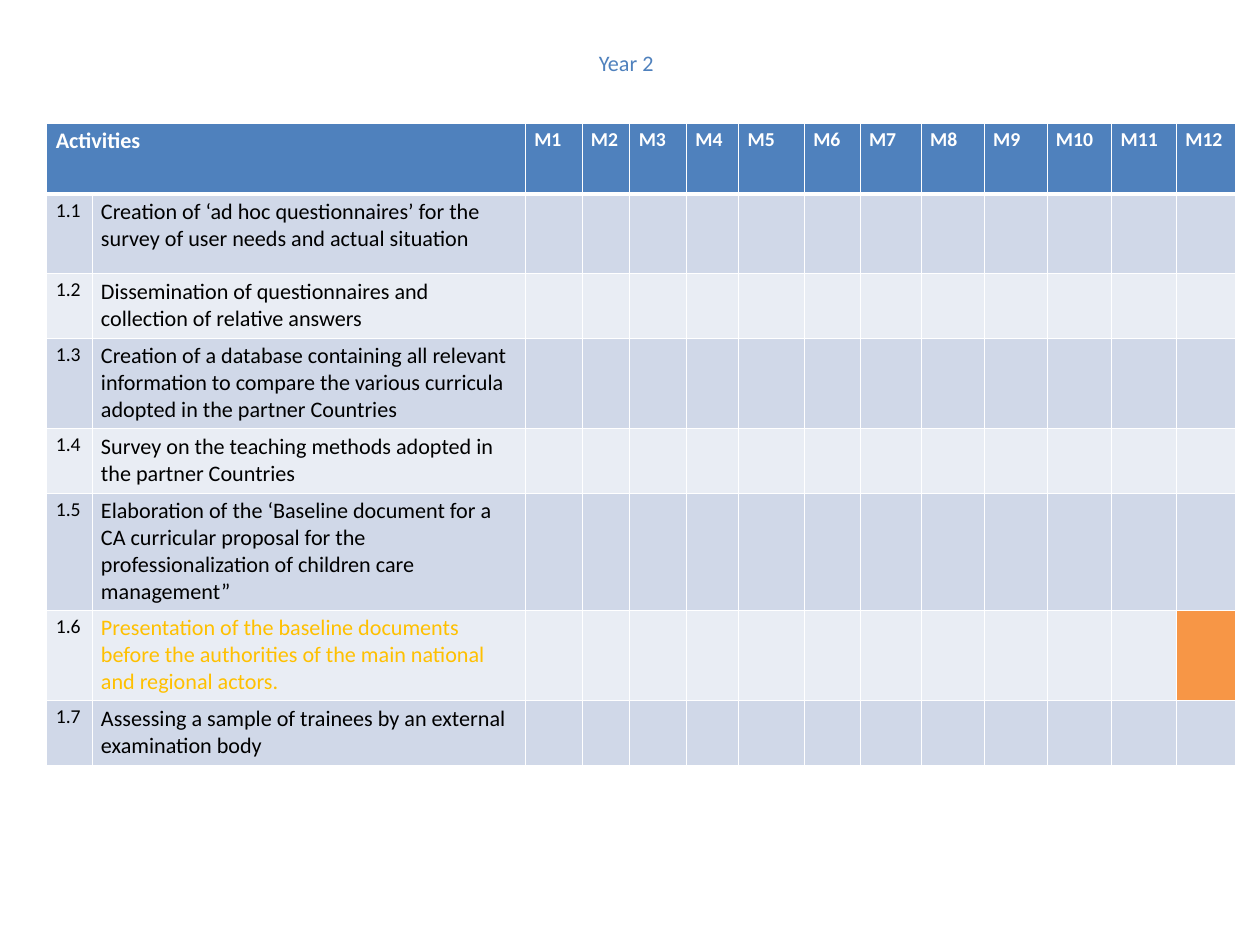
from lxml import etree
from pptx import Presentation
from pptx.dml.color import RGBColor
from pptx.oxml.ns import qn
from pptx.util import Inches, Pt

BLUE = RGBColor(0x4F, 0x81, 0xBD)
DARK_BAND = RGBColor(0xD0, 0xD8, 0xE8)
LIGHT_BAND = RGBColor(0xE9, 0xED, 0xF4)
ORANGE = RGBColor(0xF7, 0x96, 0x46)
AMBER = RGBColor(0xFF, 0xC0, 0x00)
WHITE = RGBColor(0xFF, 0xFF, 0xFF)
BLACK = RGBColor(0x00, 0x00, 0x00)

COLUMN_WIDTHS = [0.51, 4.89, 0.64, 0.54, 0.64, 0.59, 0.74,
                 0.63, 0.69, 0.71, 0.71, 0.73, 0.73, 0.67]
ROW_HEIGHTS = [0.8, 0.9, 0.73, 1.02, 0.73, 1.32, 1.02, 0.73]
ACTIVITIES = [
    "Creation of ‘ad hoc questionnaires’ for the survey of user needs and actual situation",
    "Dissemination of questionnaires and collection of relative answers",
    "Creation of a database containing all relevant information to compare "
    "the various curricula adopted in the partner Countries",
    "Survey on the teaching methods adopted in the partner Countries",
    "Elaboration of the ‘Baseline document for a CA curricular proposal for the "
    "professionalization of children care management”",
    "Presentation of the baseline documents before the authorities of the main "
    "national and regional actors.",
    "Assessing a sample of trainees by an external examination body",
]
PRESENTATION_ROW = 6
MONTH_12 = 13


def write(text_frame, text, size, color, bold=False):
    text_frame.text = text
    font = text_frame.paragraphs[0].runs[0].font
    font.name = "Calibri"
    font.size = Pt(size)
    font.bold = bold
    font.color.rgb = color


def add_borders(cell, top, bottom):
    """Draw white borders, 1 pt at the sides; call before filling the cell."""
    properties = cell._tc.get_or_add_tcPr()
    for side, width in (("L", 1), ("R", 1), ("T", top), ("B", bottom)):
        line = etree.SubElement(properties, qn(f"a:ln{side}"), w=str(Pt(width)))
        fill = etree.SubElement(line, qn("a:solidFill"))
        etree.SubElement(fill, qn("a:srgbClr"), val=str(WHITE))


presentation = Presentation()
presentation.slide_width = Inches(14.22)
presentation.slide_height = Inches(10.67)
slide = presentation.slides.add_slide(presentation.slide_layouts[6])

# Monthly plan
table = slide.shapes.add_table(
    len(ROW_HEIGHTS), len(COLUMN_WIDTHS), Inches(0.53), Inches(1.39),
    Inches(sum(COLUMN_WIDTHS)), Inches(sum(ROW_HEIGHTS))).table
for column, width in zip(table.columns, COLUMN_WIDTHS):
    column.width = Inches(width)
for row, height in zip(table.rows, ROW_HEIGHTS):
    row.height = Inches(height)

for row_number, row in enumerate(table.rows):
    if row_number == 0:
        band = BLUE
    else:
        band = DARK_BAND if row_number % 2 else LIGHT_BAND
    for cell in row.cells:
        add_borders(cell, 3 if row_number == 1 else 1, 3 if row_number == 0 else 1)
        cell.fill.solid()
        cell.fill.fore_color.rgb = band
table.cell(PRESENTATION_ROW, MONTH_12).fill.fore_color.rgb = ORANGE

table.cell(0, 0).merge(table.cell(0, 1))
write(table.cell(0, 0).text_frame, "Activities", 18, WHITE, bold=True)
for month in range(1, 13):
    write(table.cell(0, month + 1).text_frame, f"M{month}", 16, WHITE, bold=True)
for number, activity in enumerate(ACTIVITIES, start=1):
    color = AMBER if number == PRESENTATION_ROW else BLACK
    write(table.cell(number, 0).text_frame, f"1.{number}", 16, BLACK)
    write(table.cell(number, 1).text_frame, activity, 18, color)

# Year heading
heading = slide.shapes.add_textbox(Inches(6.66), Inches(0.51), Inches(7.3), Inches(0.4))
heading.text_frame.word_wrap = True
write(heading.text_frame, "Year 2", 18, BLUE)

presentation.save("out.pptx")
